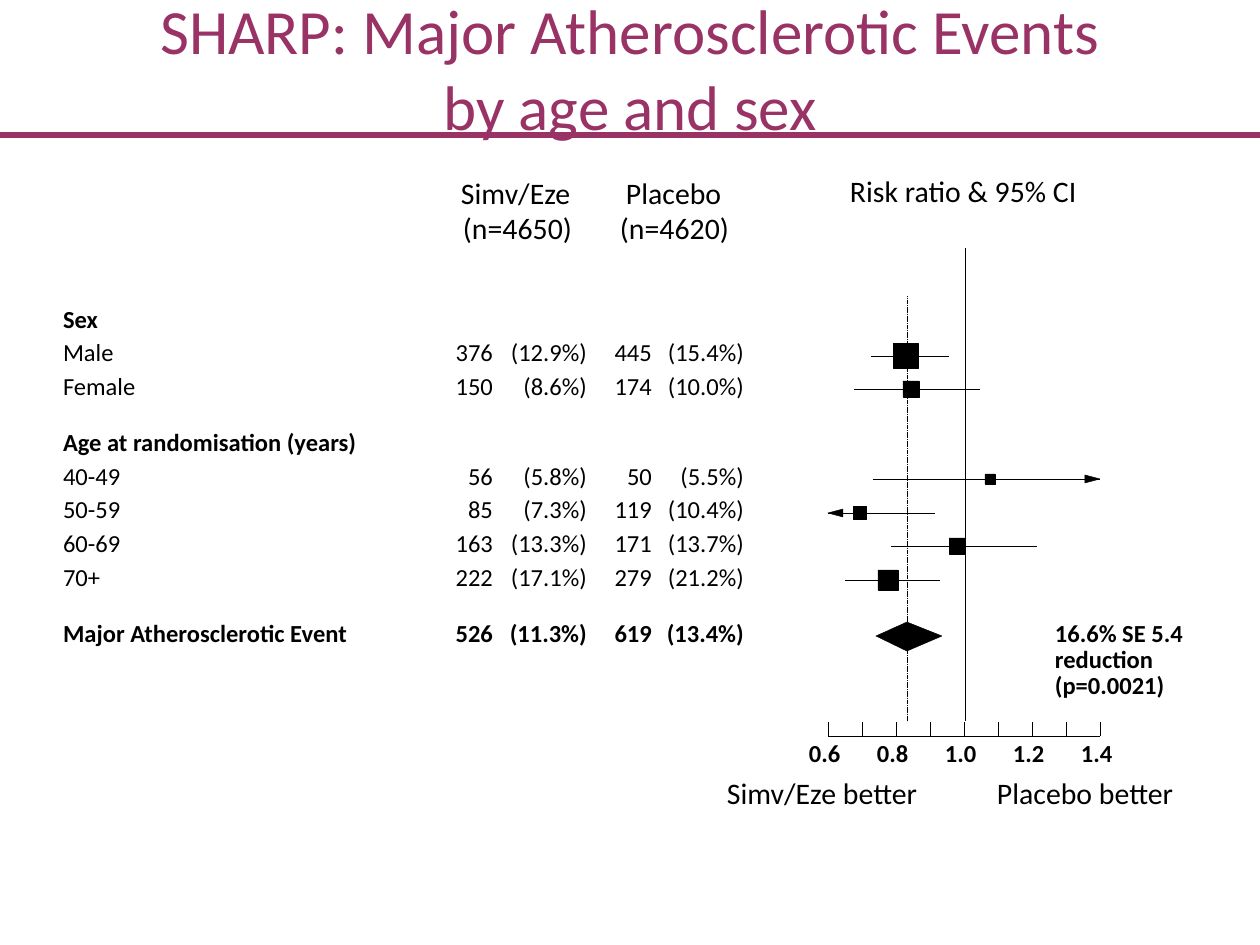
from dataclasses import dataclass

from lxml import etree
from pptx import Presentation
from pptx import util as u
from pptx.dml.color import RGBColor
from pptx.enum import dml, shapes, text
from pptx.oxml import ns

SCALE = 914400 / 126
FONT = "Calibri"
BLACK = RGBColor(0x00, 0x00, 0x00)
PLUM = RGBColor(0x99, 0x33, 0x66)

ROW_HEIGHT = 39
MARKER_OFFSET = 18
COLUMNS = [(440, 53), (496, 91), (599, 53), (653, 91)]
AXIS_LEFT, AXIS_RIGHT, AXIS_TOP = 828, 1100, 736
TICK_STEP, TICK_LENGTH = 34, 14
PLOT_BOTTOM = 721
ARROW_LENGTH, ARROW_HALF = 15, 4


@dataclass
class Row:
    top: int
    label: str
    values: tuple[str, ...] = ()
    bold: bool = False


@dataclass
class Interval:
    top: int
    low: int
    center: int
    high: int
    size: int
    arrow: int = 0


@dataclass
class Caption:
    left: int
    top: int
    width: int
    words: str
    size: int = 17
    bold: bool = False


ROWS = [
    Row(304, "Sex", bold=True),
    Row(337, "Male", ("376", "(12.9%)", "445", "(15.4%)")),
    Row(371, "Female", ("150", "(8.6%)", "174", "(10.0%)")),
    Row(427, "Age at randomisation (years)", bold=True),
    Row(461, "40-49", ("56", "(5.8%)", "50", "(5.5%)")),
    Row(494, "50-59", ("85", "(7.3%)", "119", "(10.4%)")),
    Row(528, "60-69", ("163", "(13.3%)", "171", "(13.7%)")),
    Row(562, "70+", ("222", "(17.1%)", "279", "(21.2%)")),
    Row(618, "Major Atherosclerotic Event", ("526", "(11.3%)", "619", "(13.4%)"), True),
]

INTERVALS = [
    Interval(338, 871, 906, 949, 25),
    Interval(371, 854, 911, 980, 16),
    Interval(461, 873, 990, 1100, 10, 1),
    Interval(495, 828, 860, 935, 13, -1),
    Interval(528, 891, 957, 1037, 16),
    Interval(562, 845, 888, 940, 20),
]

CAPTIONS = [
    Caption(850, 173, 239, "Risk ratio & 95% CI"),
    Caption(626, 175, 108, "Placebo"),
    Caption(461, 175, 110, "Simv/Eze"),
    Caption(727, 775, 199, "Simv/Eze better"),
    Caption(997, 775, 198, "Placebo better"),
    Caption(620, 210, 122, "(n=4620)"),
    Caption(463, 210, 122, "(n=4650)"),
    Caption(1055, 618, 156, "16.6% SE 5.4", 14, True),
    Caption(1055, 644, 125, "reduction", 14, True),
    Caption(1055, 670, 137, "(p=0.0021)", 14, True),
]


def px(value: float) -> u.Emu:
    return u.Emu(round(value * SCALE))


def add_text(slide, words: str, *, left: int, top: int, width: int,
             size: int = 14, bold: bool = False, align=text.PP_ALIGN.LEFT) -> None:
    box = slide.shapes.add_textbox(px(left), px(top), px(width), px(ROW_HEIGHT))
    frame = box.text_frame
    frame.margin_left = frame.margin_right = frame.margin_top = frame.margin_bottom = 0
    frame.word_wrap = False
    paragraph = frame.paragraphs[0]
    paragraph.alignment = align
    run = paragraph.add_run()
    run.text = words
    run.font.name = FONT
    run.font.size = u.Pt(size)
    run.font.bold = bold
    run.font.color.rgb = BLACK


def add_line(slide, start: tuple[int, int], end: tuple[int, int],
             color: RGBColor = BLACK, width: float = 0.25, dash=None) -> None:
    connector = slide.shapes.add_connector(
        shapes.MSO_CONNECTOR.STRAIGHT, px(start[0]), px(start[1]), px(end[0]), px(end[1]))
    connector.line.color.rgb = color
    connector.line.width = u.Pt(width)
    if dash is not None:
        connector.line.dash_style = dash
    etree.SubElement(connector.element.spPr, ns.qn("a:effectLst"))


def paint(shape) -> None:
    shape.shadow.inherit = False
    shape.fill.solid()
    shape.fill.fore_color.rgb = BLACK
    shape.line.color.rgb = BLACK
    shape.line.width = u.Pt(0.25)


def add_polygon(slide, points: list[tuple[int, int]]) -> None:
    builder = slide.shapes.build_freeform(*points[0], scale=SCALE)
    builder.add_line_segments(points[1:], close=True)
    paint(builder.convert_to_shape())


def add_row(slide, row: Row) -> None:
    add_text(slide, row.label, left=63, top=row.top, width=295, bold=row.bold)
    for (left, width), value in zip(COLUMNS, row.values):
        add_text(slide, value, left=left, top=row.top, width=width,
                 bold=row.bold, align=text.PP_ALIGN.RIGHT)


def add_interval(slide, interval: Interval) -> None:
    middle = interval.top + MARKER_OFFSET
    half = interval.size / 2
    paint(slide.shapes.add_shape(
        shapes.MSO_SHAPE.RECTANGLE, px(interval.center - half), px(middle - half),
        px(interval.size), px(interval.size)))
    if interval.arrow:
        tip = interval.high if interval.arrow > 0 else interval.low
        base = tip - interval.arrow * ARROW_LENGTH
        add_polygon(slide, [(tip, middle), (base, middle - ARROW_HALF),
                            (base, middle + ARROW_HALF)])
    add_line(slide, (interval.low, middle), (interval.high, middle))


def add_axis(slide) -> None:
    add_line(slide, (965, 248), (965, PLOT_BOTTOM))
    add_line(slide, (AXIS_LEFT, AXIS_TOP), (AXIS_RIGHT, AXIS_TOP))
    for index, tick in enumerate(range(AXIS_LEFT, AXIS_RIGHT + 1, TICK_STEP)):
        add_line(slide, (tick, AXIS_TOP), (tick, AXIS_TOP - TICK_LENGTH))
        if index % 2 == 0:
            add_text(slide, f"{0.6 + index / 10:.1f}", left=tick - 19,
                     top=738, width=53, bold=True)


def add_title(slide, words: str) -> None:
    title = slide.shapes.title
    title.left, title.top, title.width, title.height = 0, 0, px(1260), px(135)
    frame = title.text_frame
    frame.text = words
    frame.auto_size = text.MSO_AUTO_SIZE.NONE
    frame.vertical_anchor = text.MSO_ANCHOR.MIDDLE
    paragraph = frame.paragraphs[0]
    paragraph.alignment = text.PP_ALIGN.CENTER
    for run in paragraph.runs:
        run.font.name = FONT
        run.font.size = u.Pt(36)
        run.font.color.rgb = PLUM
    slide.shapes.element.append(title.element)


def main() -> None:
    presentation = Presentation()
    presentation.slide_width, presentation.slide_height = px(1260), px(945)
    slide = presentation.slides.add_slide(presentation.slide_layouts[5])

    add_line(slide, (0, 135), (1260, 135), PLUM, 3)
    for caption in CAPTIONS:
        add_text(slide, caption.words, left=caption.left, top=caption.top,
                 width=caption.width, size=caption.size, bold=caption.bold)
    for row in ROWS:
        add_row(slide, row)
    for interval in INTERVALS:
        add_interval(slide, interval)
    add_polygon(slide, [(907, 622), (942, 636), (907, 651), (876, 636)])
    add_axis(slide)
    add_title(slide, "SHARP: Major Atherosclerotic Events\vby age and sex")
    add_line(slide, (907, 296), (907, PLOT_BOTTOM), dash=dml.MSO_LINE.SQUARE_DOT)

    presentation.save("out.pptx")


if __name__ == "__main__":
    main()
